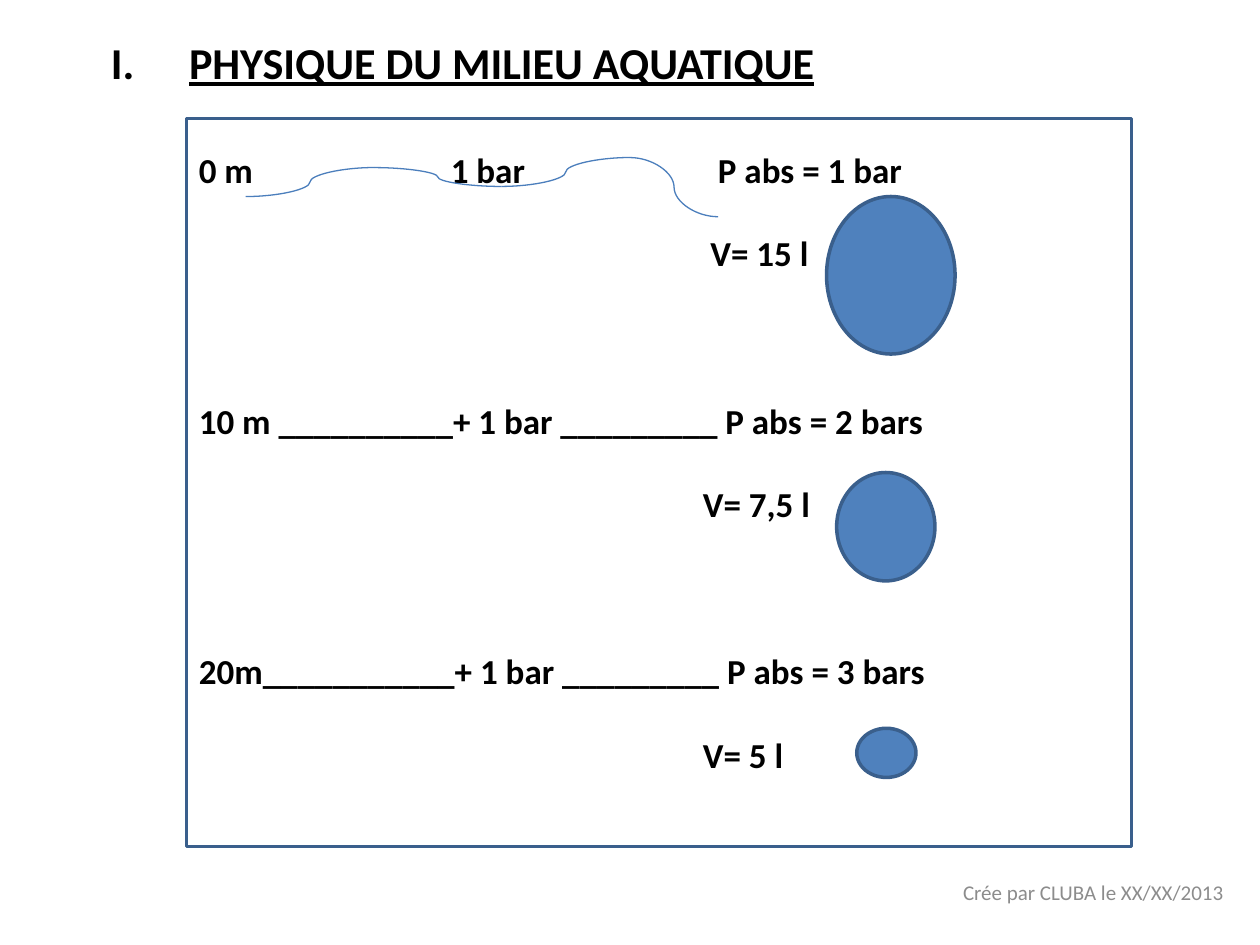
from dataclasses import dataclass
from itertools import pairwise
from lxml.etree import SubElement
from pptx import Presentation
from pptx.dml.color import RGBColor
from pptx.enum.shapes import MSO_CONNECTOR, MSO_SHAPE
from pptx.enum.text import MSO_ANCHOR, MSO_AUTO_SIZE, PP_ALIGN
from pptx.oxml.ns import qn
from pptx.util import Inches, Pt

BLACK = RGBColor(0x00, 0x00, 0x00)
WHITE = RGBColor(0xFF, 0xFF, 0xFF)
GREY = RGBColor(0x8C, 0x8C, 0x8C)
BLUE = RGBColor(0x4F, 0x81, 0xBD)
NAVY = RGBColor(0x3A, 0x5F, 0x8C)
WAVE = RGBColor(0x4B, 0x7E, 0xBC)
W, H = Inches(10), Inches(7.5)
BODY = {"name": "Calibri", "size": Pt(20), "bold": True}
TITLE = {"name": "Calibri", "size": Pt(25.2), "bold": True, "underline": True}
FOOTER = {"name": "Calibri", "size": Pt(12)}


@dataclass(frozen=True)
class Box:
    """Position and size in percent of the slide."""
    x: float
    y: float
    w: float
    h: float

    def emu(self) -> tuple[int, int, int, int]:
        """Return left, top, width and height."""
        return px(self.x), py(self.y), px(self.w), py(self.h)


@dataclass(frozen=True)
class Depth:
    """Pressure line, volume line and balloon at one depth."""
    pressure: str
    stops: tuple[float, ...]
    volume: str
    indent: float
    balloon: Box


DEPTHS = [
    Depth("0 m\t1 bar\tP abs = 1 bar", (2, 4.12), "V= 15 l", 4.06, Box(65.6, 20.8, 10.2, 16.67)),
    Depth("10 m __________+ 1 bar _________ P abs = 2 bars", (), "V= 7,5 l", 4, Box(66.4, 50, 7.8, 11.47)),
    Depth("20m___________+ 1 bar _________ P abs = 3 bars", (), "V= 5 l", 4, Box(68, 77.07, 4.7, 5.2)),
]
WATERLINE = [(19.5, 20.8), (29.7, 17.73), (39.8, 19.73), (50, 16.67), (57, 22.93)]


def px(share: float) -> int:
    """Convert a percentage of the slide width."""
    return int(W * share / 100)


def py(share: float) -> int:
    """Convert a percentage of the slide height."""
    return int(H * share / 100)


def write(p, text: str, fmt: dict, color: RGBColor, align=PP_ALIGN.LEFT) -> None:
    """Fill a paragraph with one formatted run."""
    p.alignment = align
    r = p.add_run()
    r.text = text
    for key, value in fmt.items():
        setattr(r.font, key, value)
    r.font.color.rgb = color


def add_shape(s, kind: MSO_SHAPE, box: Box, fill: RGBColor):
    """Draw a filled shape with the common outline."""
    sp = s.shapes.add_shape(kind, *box.emu())
    sp.shadow.inherit = False
    sp.fill.solid()
    sp.fill.fore_color.rgb = fill
    sp.line.color.rgb = NAVY
    sp.line.width = Pt(2)
    return sp


def add_line(tf, first: bool, text: str, gap: float, stops: tuple[float, ...]) -> None:
    """Add a line of the diagram with its gap above and tab stops."""
    p = tf.paragraphs[0] if first else tf.add_paragraph()
    p.space_before = Pt(0 if first else gap)
    if stops:
        tabs = SubElement(p._p.get_or_add_pPr(), qn("a:tabLst"))
        for stop in stops:
            SubElement(tabs, qn("a:tab"), pos=str(Inches(stop)), algn="l")
    write(p, text, BODY, BLACK)


def add_title(s) -> None:
    """Place the numbered title."""
    sp = s.shapes.title
    sp.left, sp.top, sp.width, sp.height = Box(7.8, 3.07, 60.2, 9.33).emu()
    tf = sp.text_frame
    tf.auto_size = MSO_AUTO_SIZE.NONE
    tf.vertical_anchor = MSO_ANCHOR.TOP
    p = tf.paragraphs[0]
    write(p, "PHYSIQUE DU MILIEU AQUATIQUE", TITLE, BLACK)
    pPr = p._p.get_or_add_pPr()
    pPr.set("marL", str(Inches(0.62)))
    pPr.set("indent", str(-Inches(0.62)))
    SubElement(pPr, qn("a:buFont"), typeface="+mj-lt")
    SubElement(pPr, qn("a:buAutoNum"), type="romanUcPeriod")


def add_diagram(s) -> None:
    """Draw the frame, its lines, the balloons and the waterline."""
    tf = add_shape(s, MSO_SHAPE.RECTANGLE, Box(14.8, 12.53, 75, 77.07), WHITE).text_frame
    tf.word_wrap = True
    tf.vertical_anchor = MSO_ANCHOR.TOP
    tf.margin_top = Inches(0.24)
    for i, d in enumerate(DEPTHS):
        add_line(tf, i == 0, d.pressure, 71.6, d.stops)
        add_line(tf, False, "\t" + d.volume, 23.6, (d.indent,))
        add_shape(s, MSO_SHAPE.OVAL, d.balloon, BLUE)
    for (x1, y1), (x2, y2) in pairwise(WATERLINE):
        c = s.shapes.add_connector(MSO_CONNECTOR.CURVE, px(x1), py(y1), px(x2), py(y2))
        c.line.color.rgb = WAVE
        c.line.width = Pt(0.75)
        SubElement(c._element.spPr, qn("a:effectLst"))


def add_footer(s) -> None:
    """Write the credit line at the lower right."""
    tf = s.shapes.add_textbox(*Box(66.4, 91.73, 31.7, 5.33).emu()).text_frame
    tf.word_wrap = True
    tf.vertical_anchor = MSO_ANCHOR.MIDDLE
    write(tf.paragraphs[0], "Crée par CLUBA le XX/XX/2013", FOOTER, GREY, PP_ALIGN.RIGHT)


def main() -> None:
    """Build and save the slide."""
    prs = Presentation()
    prs.slide_width, prs.slide_height = W, H
    s = prs.slides.add_slide(prs.slide_layouts[5])
    add_footer(s)
    add_title(s)
    add_diagram(s)
    prs.save("out.pptx")


if __name__ == "__main__":
    main()
